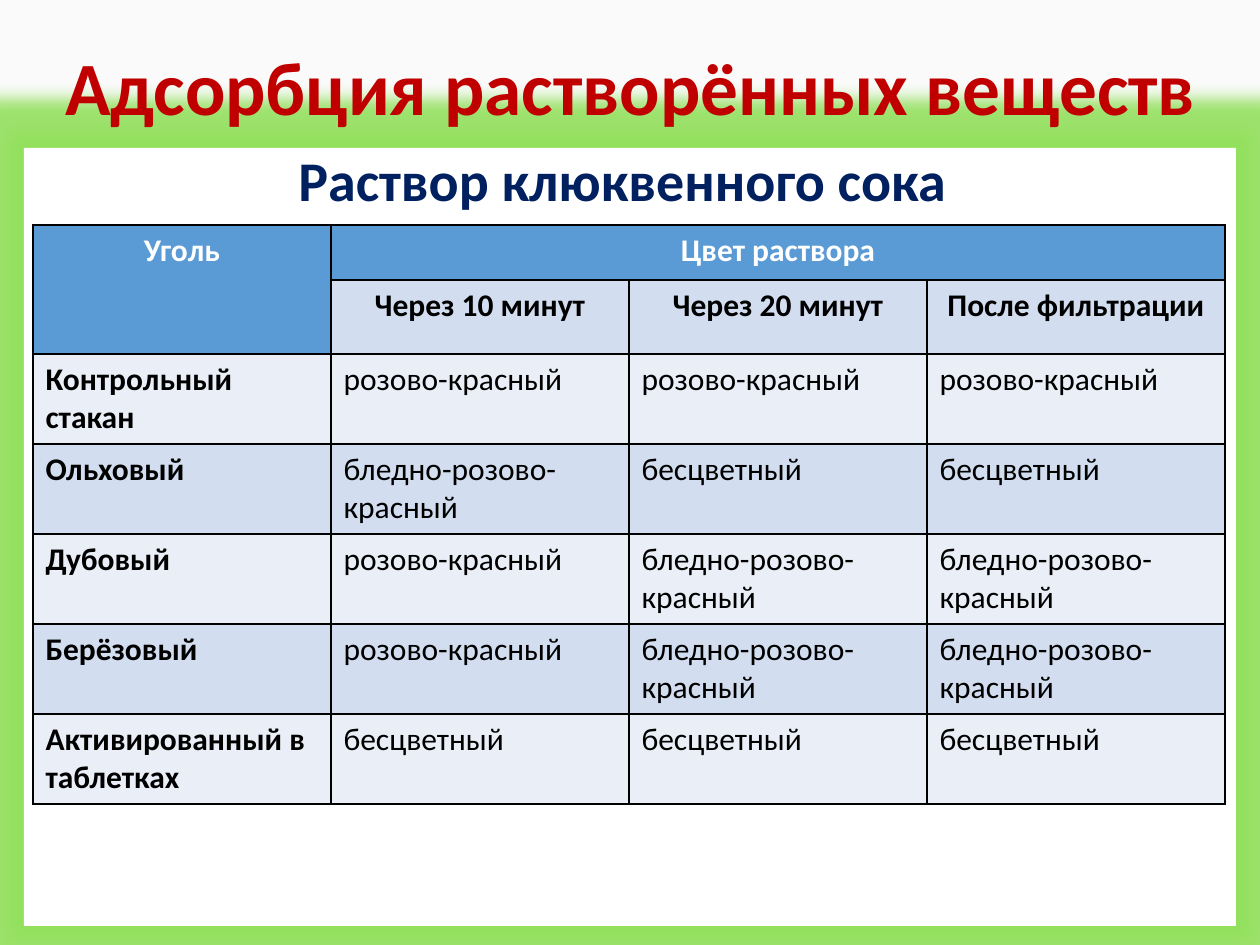
from lxml import etree
from pptx import Presentation
from pptx import util as u
from pptx.dml.color import RGBColor
from pptx.enum import shapes, text
from pptx.oxml import parse_xml
from pptx.oxml.ns import nsdecls, qn

PX = 914400 / 126
BACKGROUND = RGBColor(0xFA, 0xFA, 0xFA)
WHITE = RGBColor(0xFF, 0xFF, 0xFF)
BLACK = RGBColor(0, 0, 0)
RED = RGBColor(0xC0, 0, 0)
NAVY = RGBColor(0, 0x20, 0x60)
GREEN = RGBColor(0x92, 0xE0, 0x5C)
BLUE = RGBColor(0x5B, 0x9B, 0xD5)
BAND_DARK = RGBColor(0xD2, 0xDE, 0xEF)
BAND_LIGHT = RGBColor(0xEA, 0xEF, 0xF7)

RED_PINK = "розово-красный"
PALE = "бледно-розово-красный"
CLEAR = "бесцветный"
ROWS = [
    ["Уголь", "Цвет раствора", "", ""],
    ["", "Через 10 минут", "Через 20 минут", "После фильтрации"],
    ["Контрольный стакан", RED_PINK, RED_PINK, RED_PINK],
    ["Ольховый", PALE, CLEAR, CLEAR],
    ["Дубовый", RED_PINK, PALE, PALE],
    ["Берёзовый", RED_PINK, PALE, PALE],
    ["Активированный в таблетках", CLEAR, CLEAR, CLEAR],
]
ROW_HEIGHTS = [55, 74] + [90] * 5
COLUMN_WIDTH = 298


def box(*lengths):
    """Turn px lengths into EMU."""
    return [u.Emu(round(length * PX)) for length in lengths]


def set_font(paragraph, size, color, bold=True):
    font = paragraph.font
    font.name = "Calibri"
    font.size = u.Pt(size)
    font.bold = bold
    font.color.rgb = color


presentation = Presentation()
presentation.slide_width, presentation.slide_height = box(1260, 945)
slide = presentation.slides.add_slide(presentation.slide_layouts[5])
slide.background.fill.solid()
slide.background.fill.fore_color.rgb = BACKGROUND

# White panel with a green glow, behind the title
panel = slide.shapes.add_shape(shapes.MSO_SHAPE.RECTANGLE, *box(24, 148, 1212, 778))
panel.fill.solid()
panel.fill.fore_color.rgb = WHITE
panel.line.fill.background()
panel.shadow.inherit = False
effects = panel._element.spPr.find(qn("a:effectLst"))
glow = etree.SubElement(effects, qn("a:glow"), rad=str(u.Pt(18)))
glow_color = etree.SubElement(glow, qn("a:srgbClr"), val=str(GREEN))
etree.SubElement(glow_color, qn("a:alpha"), val="90000")
slide.shapes._spTree.insert(2, panel._element)

title = slide.shapes.title
title.left, title.top, title.width, title.height = box(0, 0, 1260, 183)
title.text_frame.text = "Адсорбция растворённых веществ"
title.text_frame.vertical_anchor = text.MSO_ANCHOR.MIDDLE
paragraph = title.text_frame.paragraphs[0]
paragraph.alignment = text.PP_ALIGN.CENTER
paragraph.line_spacing = 0.9
set_font(paragraph, 43, RED)
run_properties = paragraph.runs[0]._r.get_or_add_rPr()
run_properties.insert(0, parse_xml(
    f'<a:ln {nsdecls("a")} w="{u.Pt(0.75)}"><a:solidFill>'
    f'<a:srgbClr val="{WHITE}"/></a:solidFill></a:ln>'))

table = slide.shapes.add_table(
    len(ROWS), 4, *box(33, 225, 4 * COLUMN_WIDTH, sum(ROW_HEIGHTS))).table
for column in table.columns:
    column.width = box(COLUMN_WIDTH)[0]
for row, height in zip(table.rows, ROW_HEIGHTS):
    row.height = box(height)[0]

for r, values in enumerate(ROWS):
    for c, value in enumerate(values):
        cell = table.cell(r, c)
        for side in ("lnL", "lnR", "lnT", "lnB"):
            cell._tc.get_or_add_tcPr().append(parse_xml(
                f'<a:{side} {nsdecls("a")} w="{u.Pt(1)}"><a:solidFill>'
                f'<a:srgbClr val="{BLACK}"/></a:solidFill></a:{side}>'))
        cell.fill.solid()
        cell.fill.fore_color.rgb = BLUE if r == 0 else BAND_DARK if r % 2 else BAND_LIGHT
        cell.text = value
        paragraph = cell.text_frame.paragraphs[0]
        if r < 2:
            paragraph.alignment = text.PP_ALIGN.CENTER
        set_font(paragraph, 18, BLACK if r else WHITE, bold=r < 2 or c == 0)
table.cell(0, 0).merge(table.cell(1, 0))
table.cell(0, 1).merge(table.cell(0, 3))

subtitle = slide.shapes.add_textbox(*box(286, 139, 974, 81))
subtitle.text_frame.word_wrap = True
subtitle.text_frame.auto_size = text.MSO_AUTO_SIZE.SHAPE_TO_FIT_TEXT
subtitle.text_frame.text = "Раствор клюквенного сока"
set_font(subtitle.text_frame.paragraphs[0], 32, NAVY)

presentation.save("out.pptx")
